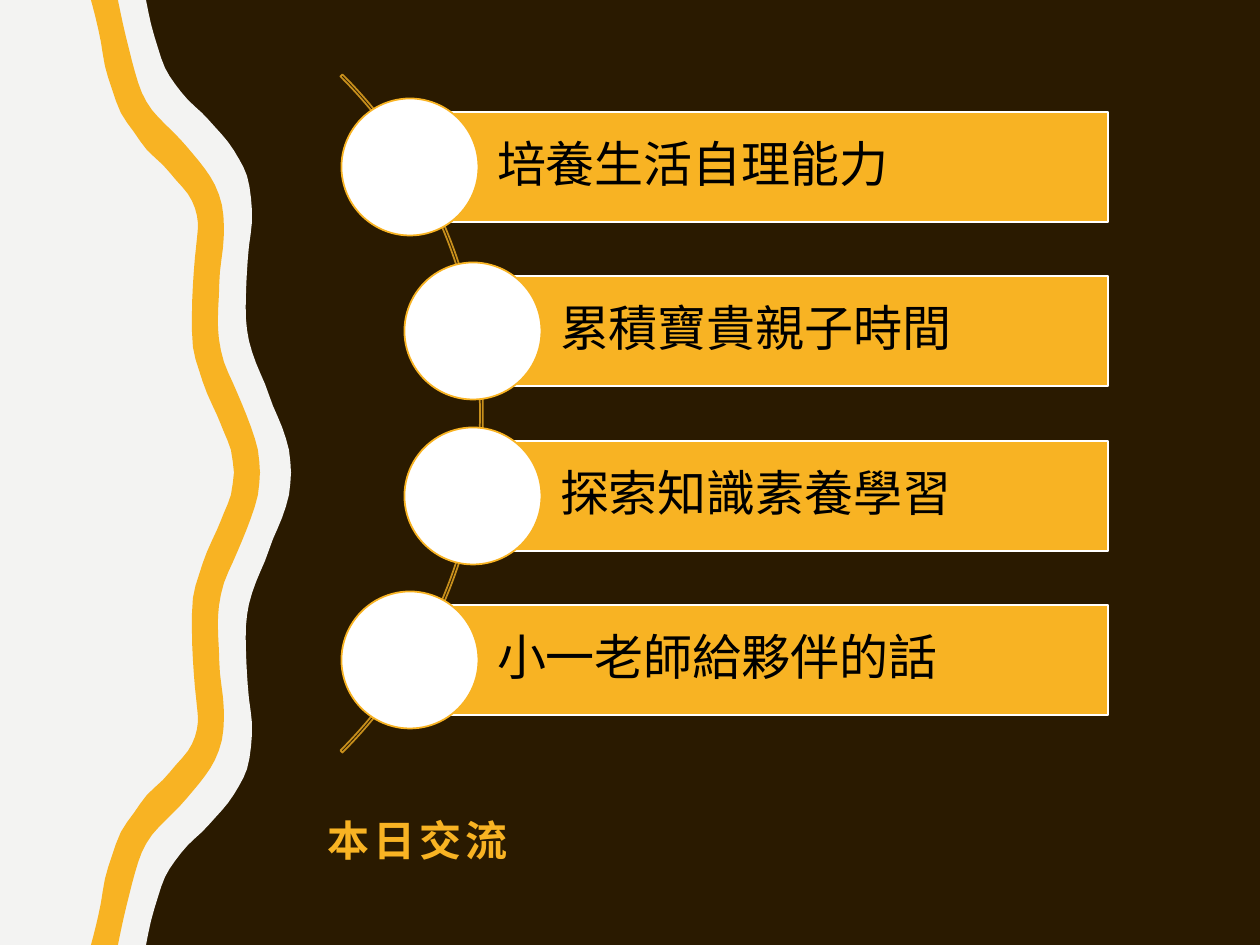
from dataclasses import dataclass

from pptx import Presentation
from pptx.dml.color import RGBColor
from pptx.enum.shapes import MSO_SHAPE
from pptx.enum.text import MSO_ANCHOR, PP_ALIGN
from pptx.shapes.autoshape import Shape
from pptx.slide import Slide
from pptx.util import Emu, Pt

RECTANGLE, OVAL, BLOCK_ARC = MSO_SHAPE.RECTANGLE, MSO_SHAPE.OVAL, MSO_SHAPE.BLOCK_ARC
TOP, MIDDLE, LEFT = MSO_ANCHOR.TOP, MSO_ANCHOR.MIDDLE, PP_ALIGN.LEFT

COLORS = {
    "background": "2A1A00",
    "paper": "F3F3F2",
    "gold": "F8B323",
    "arc": "C78F1C",
    "white": "FFFFFF",
    "black": "000000",
}
FONT = "Calibri"
PX_PER_INCH = 126
SLIDE_WIDTH, SLIDE_HEIGHT = 1260, 945

BAR_RIGHT, BAR_HEIGHT = 1108, 110
FIRST_BAR_TOP, LAST_BAR_TOP = 112, 605
CIRCLE_SIZE = 137
OUTER_LEFT, INNER_LEFT = 410, 473

Point = tuple[float, float]

# Upper halves of the wave edges, mirrored at mid-height.
PAPER_EDGE: list[Point] = [
    (146, 0), (151, 24), (158, 48), (165, 68), (175, 84), (188, 100),
    (202, 113), (215, 127), (228, 142), (239, 159), (247, 176), (251, 198),
    (252, 222), (249, 246), (247, 271), (246, 295), (246, 319), (249, 341),
    (256, 363), (265, 384), (273, 406), (282, 427), (289, 450), (291, 472),
]
RIBBON_RIGHT: list[Point] = [
    (118, 0), (123, 24), (129, 49), (135, 72), (142, 93), (152, 110),
    (166, 125), (180, 139), (193, 154), (205, 169), (215, 185), (222, 205),
    (224, 227), (223, 248), (220, 272), (219, 295), (218, 318), (219, 339),
    (224, 362), (233, 383), (242, 404), (251, 427), (258, 450), (260, 472),
]
RIBBON_LEFT: list[Point] = [
    (91, 0), (96, 19), (101, 42), (105, 66), (112, 89), (121, 113),
    (134, 132), (147, 150), (163, 165), (176, 180), (188, 194), (195, 208),
    (198, 223), (197, 239), (195, 258), (193, 285), (192, 315), (193, 347),
    (199, 370), (207, 393), (217, 415), (224, 432), (231, 450), (234, 472),
]


@dataclass(frozen=True)
class Topic:
    text: str
    left: int


TOPICS = [
    Topic("培養生活自理能力", OUTER_LEFT),
    Topic("累積寶貴親子時間", INNER_LEFT),
    Topic("探索知識素養學習", INNER_LEFT),
    Topic("小一老師給夥伴的話", OUTER_LEFT),
]


def px(length: float) -> Emu:
    return Emu(round(length * 914400 / PX_PER_INCH))


def color(name: str) -> RGBColor:
    return RGBColor.from_string(COLORS[name])


def paint(shape: Shape, fill: str | None, line: str | None) -> None:
    """Set fill and outline by colour name; None leaves that part clear."""
    shape.shadow.inherit = False
    if fill:
        shape.fill.solid()
        shape.fill.fore_color.rgb = color(fill)
    else:
        shape.fill.background()
    if line:
        shape.line.color.rgb = color(line)
        shape.line.width = Pt(1)
    else:
        shape.line.fill.background()


def add_preset(slide: Slide, preset: MSO_SHAPE, left: float, top: float,
               width: float, height: float, fill: str | None, line: str) -> Shape:
    shape = slide.shapes.add_shape(preset, px(left), px(top), px(width), px(height))
    paint(shape, fill, line)
    return shape


def wave_edge(upper: list[Point]) -> list[Point]:
    """Mirror an upper half edge, then halve each step on a Catmull-Rom curve."""
    points = upper + [(x, SLIDE_HEIGHT - y) for x, y in reversed(upper)]
    padded = [points[0], *points, points[-1]]
    edge = [points[0]]
    for before, start, end, after in zip(padded, padded[1:], padded[2:], padded[3:]):
        middle_x, middle_y = (
            (9 * (s + e) - b - a) / 16 for b, s, e, a in zip(before, start, end, after)
        )
        edge += [(middle_x, middle_y), end]
    return edge


def add_outline(slide: Slide, points: list[Point], fill: str) -> None:
    corners = [(px(x), px(y)) for x, y in points]
    builder = slide.shapes.build_freeform(*corners[0], scale=1.0)
    builder.add_line_segments(corners[1:], close=True)
    paint(builder.convert_to_shape(), fill, None)


def add_topic(slide: Slide, topic: Topic, top: int) -> None:
    bar = add_preset(slide, RECTANGLE, topic.left, top, BAR_RIGHT - topic.left,
                     BAR_HEIGHT, "gold", "white")
    frame = bar.text_frame
    frame.word_wrap = True
    frame.vertical_anchor = MIDDLE
    frame.margin_left = px(87)
    frame.margin_top = frame.margin_right = frame.margin_bottom = px(10)
    frame.text = topic.text
    para = frame.paragraphs[0]
    para.alignment = LEFT
    para.line_spacing = 0.9
    para.space_after = Pt(9.8)
    font = para.runs[0].font
    font.name, font.size = FONT, Pt(28)
    font.color.rgb = color("black")

    add_preset(slide, OVAL, topic.left - CIRCLE_SIZE / 2,
               top + (BAR_HEIGHT - CIRCLE_SIZE) / 2,
               CIRCLE_SIZE, CIRCLE_SIZE, "white", "gold")


def fill_caption(slide: Slide) -> None:
    body = slide.placeholders[1]
    body.left, body.top, body.width, body.height = px(315), px(808), px(726), px(107)
    frame = body.text_frame
    frame.vertical_anchor = TOP
    frame.text = "本日交流"
    para = frame.paragraphs[0]
    para.space_before = Pt(3.9)
    span = para.runs[0]
    span.font.name, span.font.size, span.font.bold = FONT, Pt(24), True
    span.font.color.rgb = color("gold")
    span.font._element.set("spc", "220")


def main() -> None:
    deck = Presentation()
    deck.slide_width, deck.slide_height = px(SLIDE_WIDTH), px(SLIDE_HEIGHT)
    section_layout = deck.slide_layouts[2]
    page = deck.slides.add_slide(section_layout)
    page.background.fill.solid()
    page.background.fill.fore_color.rgb = color("background")
    title = page.shapes.title.element
    title.getparent().remove(title)

    add_outline(page, [(0, 0), *wave_edge(PAPER_EDGE), (0, SLIDE_HEIGHT)], "paper")
    ribbon = wave_edge(RIBBON_RIGHT) + wave_edge(RIBBON_LEFT)[::-1]
    add_outline(page, ribbon, "gold")
    fill_caption(page)

    arc = add_preset(page, BLOCK_ARC, -476, -66, 959, 959, None, "arc")
    for index, value in enumerate((189, 27, 0.003)):
        arc.adjustments[index] = value

    pitch = (LAST_BAR_TOP - FIRST_BAR_TOP) / (len(TOPICS) - 1)
    for index, topic in enumerate(TOPICS):
        add_topic(page, topic, FIRST_BAR_TOP + round(index * pitch))

    deck.save("out.pptx")


if __name__ == "__main__":
    main()
